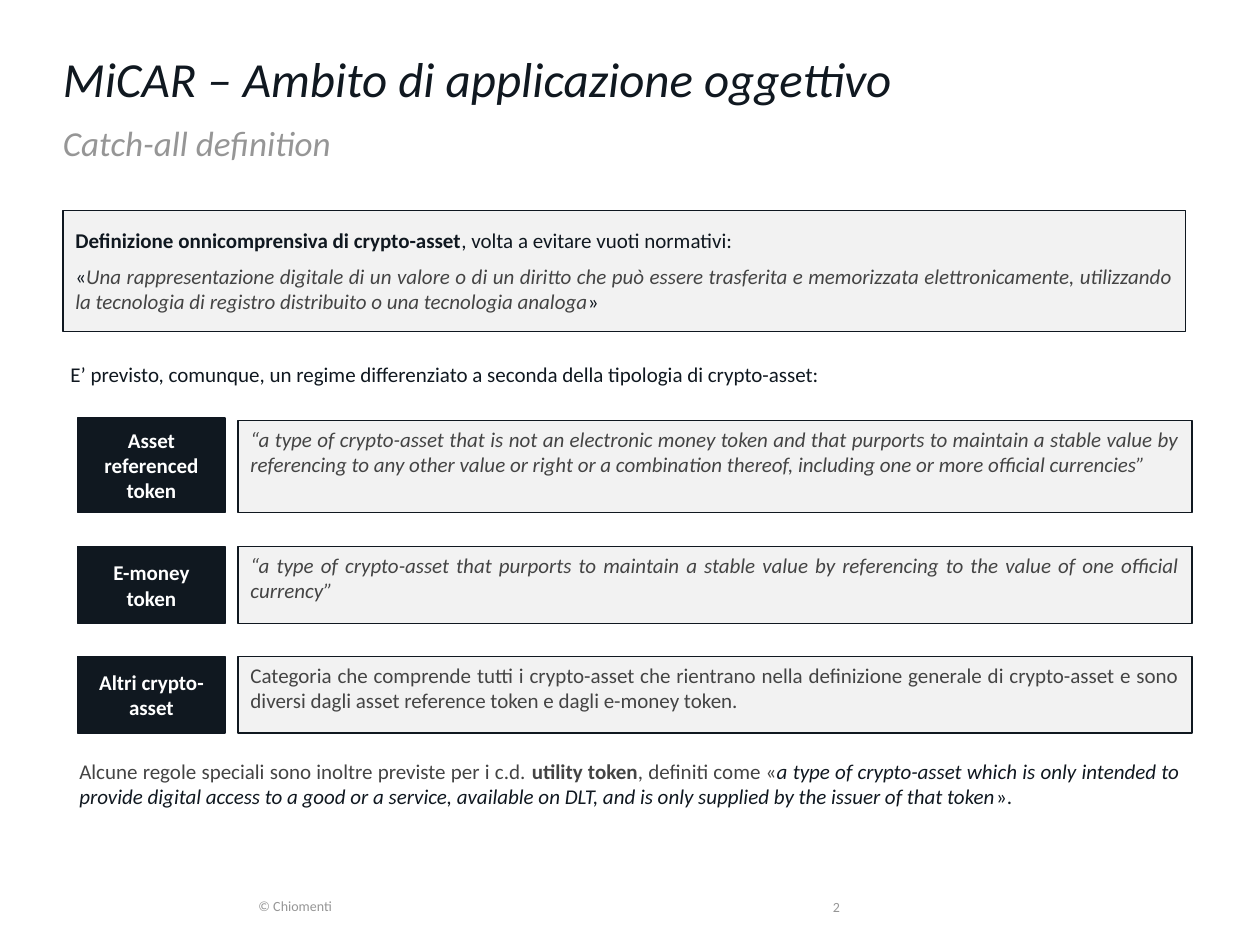
import pptx
import pptx.util
import pptx.dml.color
import pptx.enum.shapes
import pptx.enum.text

Cm = pptx.util.Cm
Pt = pptx.util.Pt
ALIGN = pptx.enum.text.PP_ALIGN
ANCHOR = pptx.enum.text.MSO_ANCHOR

COLORS = {
    "ink": "101820",
    "edge": "0F1720",
    "panel": "F2F2F2",
    "body": "444444",
    "muted": "969696",
    "white": "FFFFFF",
}


def color(name):
    return pptx.dml.color.RGBColor.from_string(COLORS[name])


def add_box(page, place, paragraphs, size=12, tone="ink", align=ALIGN.LEFT,
            fill=None, edge="ink", anchor=ANCHOR.TOP, inset=True, bold=False, italic=False):
    left, top, width, height = [Cm(length) for length in place]
    if fill:
        box = page.shapes.add_shape(
            pptx.enum.shapes.MSO_SHAPE.RECTANGLE, left, top, width, height)
        box.shadow.inherit = False
        box.fill.solid()
        box.fill.fore_color.rgb = color(fill)
        box.line.color.rgb = color(edge)
        box.line.width = Pt(0.75)
    else:
        box = page.shapes.add_textbox(left, top, width, height)
    frame = box.text_frame
    frame.word_wrap = True
    frame.vertical_anchor = anchor
    if not inset:
        frame.margin_left = frame.margin_top = frame.margin_right = frame.margin_bottom = 0
    for index, spans in enumerate(paragraphs):
        para = frame.paragraphs[0] if index == 0 else frame.add_paragraph()
        para.alignment = align
        para.font.name = "Calibri"
        para.font.size = Pt(size)
        para.font.bold = bold
        para.font.italic = italic
        para.font.color.rgb = color(tone)
        for text, changes in spans:
            span = para.add_run()
            span.text = text
            if "tone" in changes:
                span.font.color.rgb = color(changes["tone"])
            if "bold" in changes:
                span.font.bold = changes["bold"]
            if "italic" in changes:
                span.font.italic = changes["italic"]
    return frame


deck = pptx.Presentation()
deck.slide_width = Cm(25.4)
deck.slide_height = Cm(19.05)
page = deck.slides.add_slide(deck.slide_layouts[6])

title = add_box(page, (1.27, 1.04, 22.86, 2.06),
                [[("MiCAR – Ambito di applicazione oggettivo", {})]],
                size=28, inset=False, italic=True).paragraphs[0]
title.line_spacing = Pt(32)
title.add_line_break()
subtitle = title.add_run()
subtitle.text = "Catch-all definition"
subtitle.font.size = Pt(20)
subtitle.font.color.rgb = color("muted")

definition = add_box(page, (1.27, 4.24, 22.63, 2.44), [
    [("Definizione onnicomprensiva di crypto-asset", {"bold": True}),
     (", volta a evitare vuoti normativi:", {})],
    [("«", {}),
     ("Una rappresentazione digitale di un valore o di un diritto che può essere trasferita "
      "e memorizzata elettronicamente, utilizzando la tecnologia di registro distribuito "
      "o una tecnologia analoga", {"tone": "body", "italic": True}),
     ("»", {})],
], align=ALIGN.JUSTIFY, fill="panel", edge="edge", anchor=ANCHOR.MIDDLE)
for para in definition.paragraphs:
    para.space_after = Pt(6)

add_box(page, (1.17, 7.16, 22.86, 0.76), [[(
    "E’ previsto, comunque, un regime differenziato a seconda della tipologia di crypto-asset:",
    {})]])

categories = [
    ("Asset referenced token", 8.43, 1.9, 8.48, 1.85, True,
     "“a type of crypto-asset that is not an electronic money token and that purports to "
     "maintain a stable value by referencing to any other value or right or a combination "
     "thereof, including one or more official currencies”"),
    ("E-money token", 11.02, 1.55, 11.02, 1.55, True,
     "“a type of crypto-asset that purports to maintain a stable value by referencing to "
     "the value of one official currency”"),
    ("Altri crypto-asset", 13.23, 1.55, 13.23, 1.55, False,
     "Categoria che comprende tutti i crypto-asset che rientrano nella definizione generale "
     "di crypto-asset e sono diversi dagli asset reference token e dagli e-money token."),
]
for label, label_top, label_height, text_top, text_height, quoted, text in categories:
    add_box(page, (1.57, label_top, 2.97, label_height), [[(label, {})]], tone="white",
            align=ALIGN.CENTER, fill="ink", edge="edge", anchor=ANCHOR.MIDDLE, bold=True)
    add_box(page, (4.8, text_top, 19.23, text_height), [[(text, {})]], tone="body",
            align=ALIGN.JUSTIFY, fill="panel", italic=quoted)

add_box(page, (1.35, 15.16, 22.68, 1.8), [[
    ("Alcune regole speciali sono inoltre previste per i c.d. ", {}),
    ("utility token", {"bold": True}),
    (", definiti come «", {}),
    ("a type of crypto-asset which is only intended to provide digital access to a good or "
     "a service, available on DLT, and is only supplied by the issuer of that token",
     {"tone": "ink", "italic": True}),
    ("».", {"tone": "ink"}),
]], tone="body", align=ALIGN.JUSTIFY)

footer = add_box(page, (5.21, 18.11, 3.33, 0.33), [[("© Chiomenti", {})]],
                 size=8, tone="muted", inset=False)
footer.paragraphs[0].line_spacing = Pt(9)
add_box(page, (16.79, 18.11, 3.51, 0.86), [[("2", {})]], size=8, tone="muted", inset=False)

deck.save("out.pptx")
